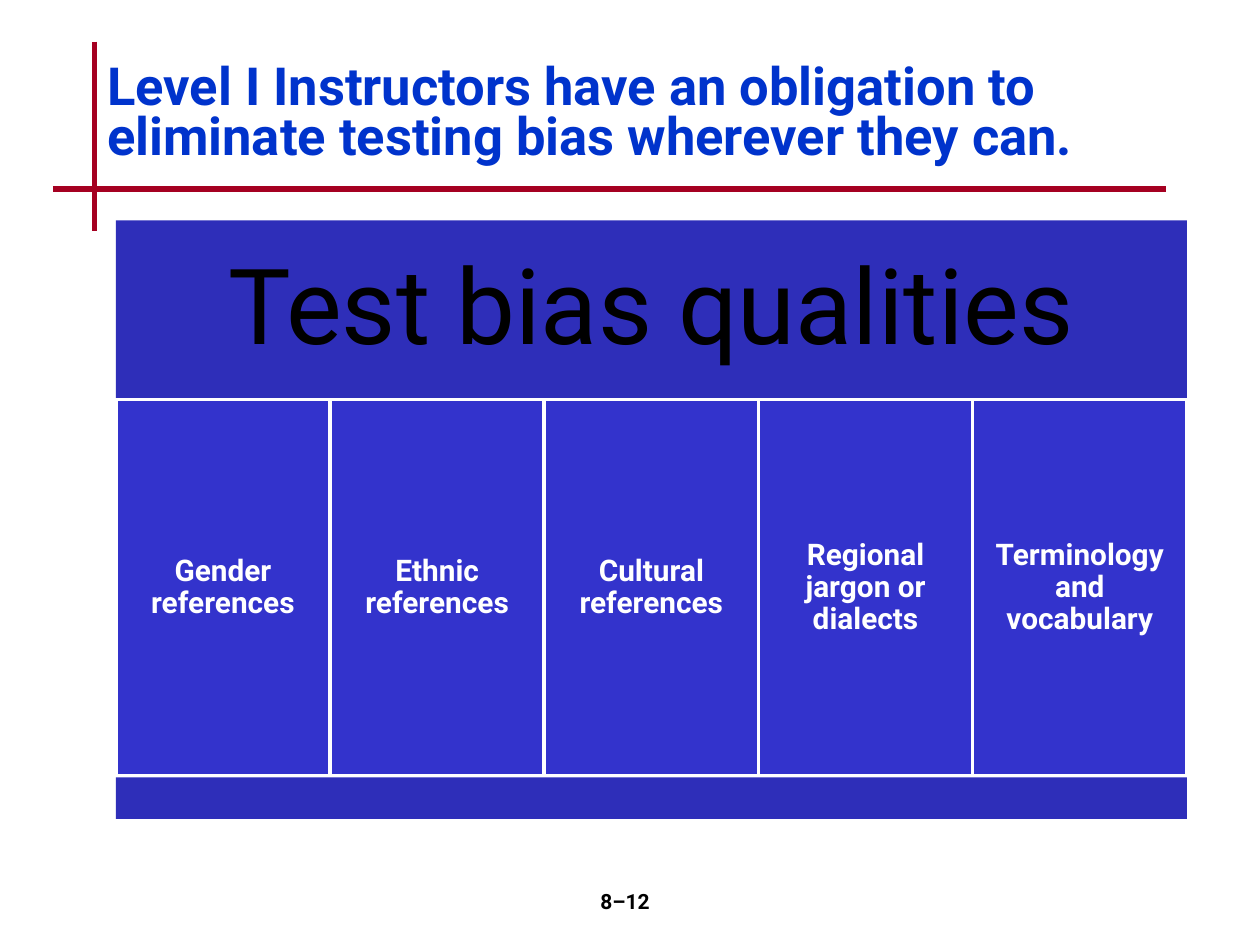
from pptx import Presentation
from pptx import util as u
from pptx.dml.color import RGBColor
from pptx.enum import shapes, text
from pptx.oxml.ns import qn
from lxml import etree

COLORS = {
    "rule": "A50021",
    "band": "2E2EB9",
    "column": "3333CC",
    "title": "0033CC",
    "white": "FFFFFF",
    "black": "000000",
}


class SlideBuilder:
    font = "Roboto"

    def __init__(self, slide):
        self.slide = slide

    def color(self, name):
        return RGBColor.from_string(COLORS[name])

    def set_text(self, shape, content, size, color, bold=True, spacing=1.0,
                 align=text.PP_ALIGN.CENTER, anchor=text.MSO_ANCHOR.MIDDLE, inset=None):
        frame = shape.text_frame
        frame.text = content
        frame.word_wrap = True
        frame.auto_size = text.MSO_AUTO_SIZE.NONE
        frame.vertical_anchor = anchor
        if inset is not None:
            frame.margin_left = frame.margin_right = u.Inches(inset)
            frame.margin_top = frame.margin_bottom = u.Inches(inset)
        paragraph = frame.paragraphs[0]
        paragraph.alignment = align
        paragraph.line_spacing = spacing
        font = paragraph.runs[0].font
        font.name = self.font
        font.size = u.Pt(size)
        font.bold = bold
        font.color.rgb = self.color(color)

    def title(self, content, left, top, width, height):
        shape = self.slide.shapes.title
        shape.left, shape.top = u.Inches(left), u.Inches(top)
        shape.width, shape.height = u.Inches(width), u.Inches(height)
        self.set_text(shape, content, 30, "title", spacing=0.8, align=text.PP_ALIGN.LEFT)

    def rule(self, x1, y1, x2, y2):
        line = self.slide.shapes.add_connector(
            shapes.MSO_CONNECTOR.STRAIGHT,
            u.Inches(x1), u.Inches(y1), u.Inches(x2), u.Inches(y2))
        line.line.color.rgb = self.color("rule")
        line.line.width = u.Pt(3)
        etree.SubElement(line._element.spPr, qn("a:effectLst"))

    def rectangle(self, left, top, width, height, fill, outline=None):
        shape = self.slide.shapes.add_shape(
            shapes.MSO_SHAPE.RECTANGLE,
            u.Inches(left), u.Inches(top), u.Inches(width), u.Inches(height))
        shape.shadow.inherit = False
        shape.fill.solid()
        shape.fill.fore_color.rgb = self.color(fill)
        if outline:
            shape.line.color.rgb = self.color(outline)
            shape.line.width = u.Pt(2)
        else:
            shape.line.fill.background()
        return shape

    def label(self, content, left, top, width, height):
        shape = self.slide.shapes.add_textbox(
            u.Inches(left), u.Inches(top), u.Inches(width), u.Inches(height))
        self.set_text(shape, content, 12, "black", anchor=text.MSO_ANCHOR.TOP)


def main():
    presentation = Presentation()
    presentation.slide_width = u.Inches(10)
    presentation.slide_height = u.Inches(7.5)
    slide = presentation.slides.add_slide(presentation.slide_layouts[5])
    builder = SlideBuilder(slide)

    builder.rule(0.75, 0.33, 0.75, 1.83)
    builder.rule(0.42, 1.5, 9.25, 1.5)
    builder.title("Level I Instructors have an obligation to eliminate testing bias "
                  "wherever they can.", 0.75, 0.25, 8.5, 1.33)

    left, width = 0.92, 8.5
    header = builder.rectangle(left, 1.75, width, 1.43, "band")
    builder.set_text(header, "Test bias qualities", 60, "black", bold=False,
                     spacing=0.9, inset=0.25)

    qualities = ["Gender references", "Ethnic references", "Cultural references",
                 "Regional jargon or dialects", "Terminology and vocabulary"]
    column_width = width / len(qualities)
    for index, quality in enumerate(qualities):
        column = builder.rectangle(left + index * column_width, 3.17, column_width, 2.99,
                                   "column", "white")
        builder.set_text(column, quality, 17, "white", spacing=0.9, inset=0.07)

    builder.rectangle(left, 6.17, width, 0.33, "band")
    builder.label("8–12", 3.92, 7, 2.08, 0.5)

    presentation.save("out.pptx")


if __name__ == "__main__":
    main()
